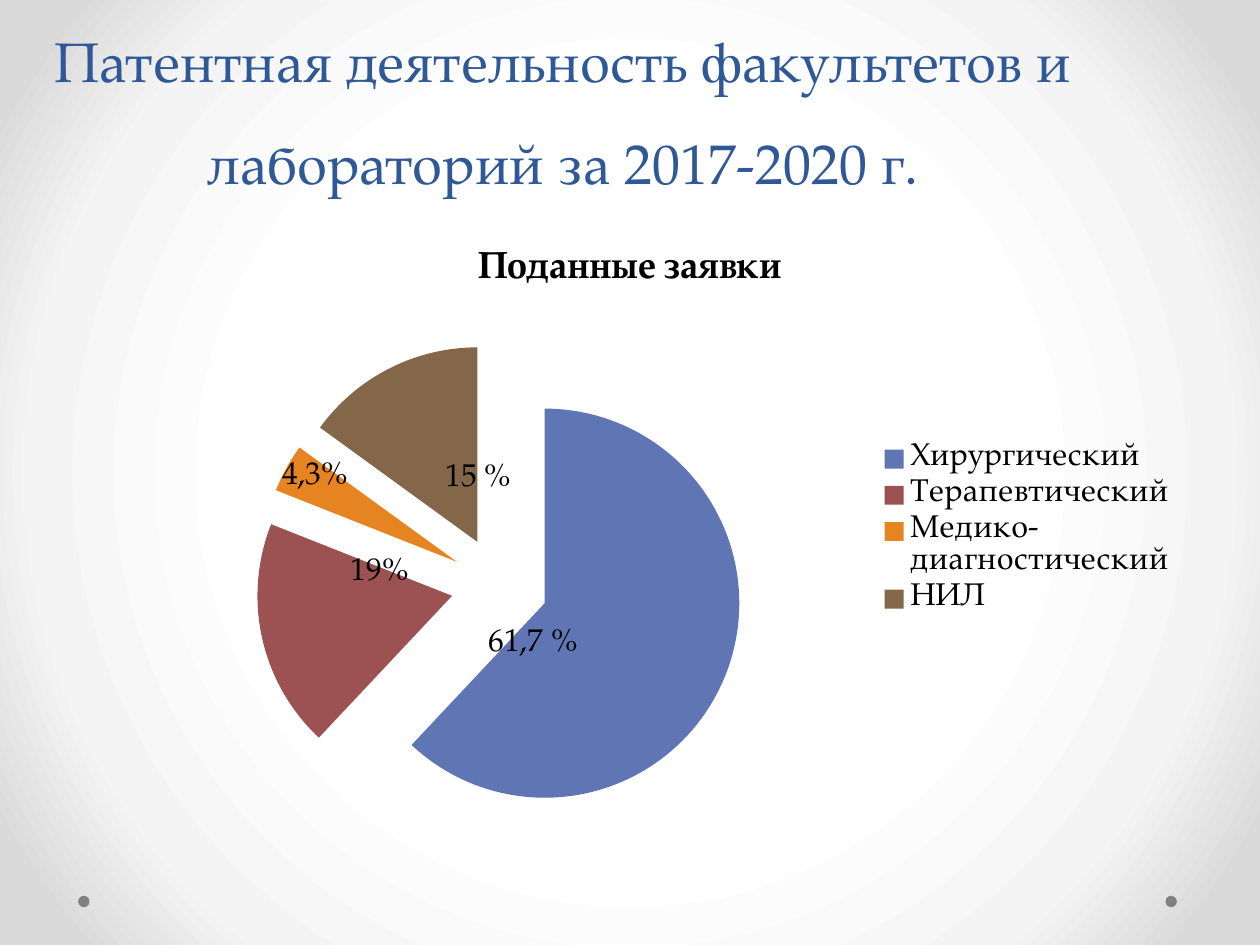
from lxml import etree
from pptx import Presentation
from pptx import util as u
from pptx.chart.data import CategoryChartData
from pptx.dml.color import RGBColor
from pptx.enum import chart as ch, shapes, text
from pptx.oxml import parse_xml
from pptx.oxml.ns import qn

FONT = "TeX Gyre Pagella"
A_NS = "http://schemas.openxmlformats.org/drawingml/2006/main"
SERIES = "Поданные заявки"
# category, value, colour, label, label shift as a share of the chart
SLICES = [
    ("Хирургический", 62, "6076B4", "61,7 %", (-0.09, 0.01)),
    ("Терапевтический", 19, "9C5252", "19%", (0.02, -0.07)),
    ("Медико-диагностический", 4, "E68422", "4,3%", (-0.05, -0.06)),
    ("НИЛ", 15, "846648", "15 %", (0.04, 0.04)),
]


def rgb(hex_color):
    return RGBColor.from_string(hex_color)


def style(font, size=18, color="000000", bold=False):
    font.name, font.size, font.bold = FONT, u.Pt(size), bold
    font.color.rgb = rgb(color)


def put_text(tf, value, align=None, spacing=None, **fmt):
    p = tf.paragraphs[0]
    p.alignment, p.line_spacing = align, spacing
    r = p.add_run()
    r.text = value
    style(r.font, **fmt)


def make_layout(**values):
    """Manual chart layout; values are shares of the chart area."""
    layout = etree.Element(qn("c:layout"))
    manual = etree.SubElement(layout, qn("c:manualLayout"))
    for tag, val in values.items():
        etree.SubElement(manual, qn("c:" + tag)).set("val", str(val))
    return layout


def set_background(s, stops):
    s.background.fill.solid()
    bg = s.background.fill._xPr
    gs = "".join(f'<a:gs pos="{pos * 1000}"><a:srgbClr val="{c}"/></a:gs>'
                 for pos, c in stops)
    grad = parse_xml(
        f'<a:gradFill xmlns:a="{A_NS}" rotWithShape="1"><a:gsLst>{gs}</a:gsLst>'
        '<a:path path="circle"><a:fillToRect l="50000" t="50000" r="50000" '
        'b="50000"/></a:path></a:gradFill>')
    bg.replace(bg.find(qn("a:solidFill")), grad)


def add_dot(s, x):
    sp = s.shapes.add_shape(shapes.MSO_SHAPE.OVAL, u.Inches(x), u.Inches(7.11),
                            u.Inches(0.09), u.Inches(0.09))
    sp.shadow.inherit = False
    sp.fill.solid()
    sp.fill.fore_color.rgb = rgb("808080")
    sp.line.fill.background()


def set_title(s, value):
    sp = s.shapes.title
    sp.left, sp.top = u.Inches(0), u.Inches(0)
    sp.width, sp.height = u.Inches(8.94), u.Inches(1.6)
    tf = sp.text_frame
    tf.word_wrap, tf.auto_size = True, text.MSO_AUTO_SIZE.NONE
    tf.vertical_anchor = text.MSO_ANCHOR.BOTTOM
    put_text(tf, value, text.PP_ALIGN.CENTER, u.Pt(58), size=32, color="2F5897")


def add_pie(s):
    data = CategoryChartData()
    data.categories = [row[0] for row in SLICES]
    data.add_series(SERIES, [row[1] for row in SLICES])
    chart = s.shapes.add_chart(ch.XL_CHART_TYPE.PIE, u.Inches(0.5), u.Inches(1.75),
                               u.Inches(9), u.Inches(4.95), data).chart
    style(chart.font)
    put_text(chart.chart_title.text_frame, SERIES, size=21.6, bold=True)

    # Legend
    chart.has_legend = True
    legend = chart.legend
    legend.position = ch.XL_LEGEND_POSITION.RIGHT
    legend.include_in_layout = False
    style(legend.font)
    legend._element.find(qn("c:legendPos")).addnext(make_layout(
        xMode="edge", yMode="edge", x=0.72, y=0.35, w=0.26, h=0.29))

    # Plot area
    area = chart._chartSpace.chart.plotArea
    for old in area.findall(qn("c:layout")):
        area.remove(old)
    area.insert(0, make_layout(layoutTarget="inner", xMode="edge", yMode="edge",
                               x=0.17, y=0.195, w=0.43, h=0.78))

    # Slices and their labels
    plot = chart.plots[0]
    plot.vary_by_categories = True
    series = plot.series[0]
    for i, (_, _, color, label, (dx, dy)) in enumerate(SLICES):
        point = series.points[i]
        point.format.fill.solid()
        point.format.fill.fore_color.rgb = rgb(color)
        point.format.line.fill.background()
        put_text(point.data_label.text_frame, label)
        point.data_label.position = ch.XL_LABEL_POSITION.CENTER
    for node, row in zip(series._element.iter(qn("c:dLbl")), SLICES):
        dx, dy = row[4]
        node.find(qn("c:idx")).addnext(make_layout(x=dx, y=dy))
    for node in series._element.iter(qn("c:showLeaderLines")):
        node.set("val", "0")
    explosion = etree.Element(qn("c:explosion"))
    explosion.set("val", "25")
    series._element.find(qn("c:dPt")).addprevious(explosion)


def main():
    prs = Presentation()
    prs.slide_width, prs.slide_height = u.Inches(10), u.Inches(7.5)
    s = prs.slides.add_slide(prs.slide_layouts[5])
    set_background(s, [(50, "FFFFFF"), (76, "F4F4F4"), (92, "DADADA")])
    for x in (9.25, 0.62):
        add_dot(s, x)
    set_title(s, "Патентная деятельность факультетов и лабораторий за 2017-2020 г.")
    add_pie(s)
    prs.save("out.pptx")


if __name__ == "__main__":
    main()
